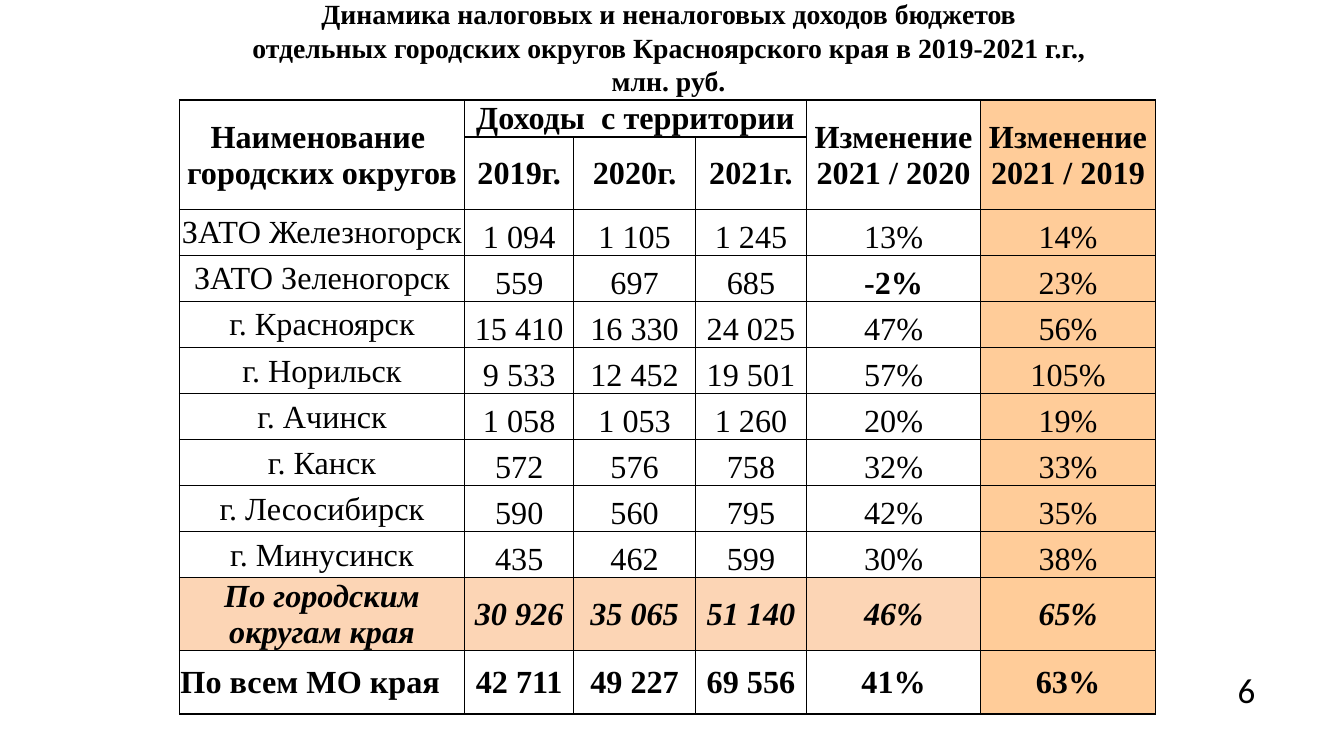
from dataclasses import dataclass
from typing import Any, Optional

from lxml.etree import SubElement
from pptx import Presentation
from pptx.dml.color import RGBColor
from pptx.enum.text import MSO_ANCHOR, MSO_AUTO_SIZE, PP_ALIGN
from pptx.oxml.ns import qn
from pptx.util import Pt


@dataclass(frozen=True)
class Theme:
    ink: str = "000000"
    peach: str = "FFCC99"
    rose: str = "FCD5B5"
    serif: str = "Times New Roman"
    sans: str = "Calibri"
    head: float = 19.8
    body: float = 23
    page: float = 25


@dataclass(frozen=True)
class Look:
    bold: bool = False
    slant: bool = False
    fill: Optional[str] = None
    anchor: Any = MSO_ANCHOR.MIDDLE
    align: Any = PP_ALIGN.CENTER


@dataclass(frozen=True)
class Row:
    name: str
    cells: tuple[str, ...]


@dataclass(frozen=True)
class Span:
    top: int
    left: int
    end: int
    right: int


THEME = Theme()
TITLE = ("Динамика налоговых и неналоговых доходов бюджетов \v"
         "отдельных городских округов Красноярского края в 2019-2021 г.г., \v"
         "млн. руб. ")
HEADS = (
    Row("Наименование \nгородских округов",
        ("Доходы  с территории", "", "", "Изменение 2021 / 2020", "Изменение 2021 / 2019")),
    Row("", ("2019г.", "2020г.", "2021г.", "", "")),
)
TOWNS = (
    Row("ЗАТО Железногорск", ("1 094", "1 105", "1 245", "13%", "14%")),
    Row("ЗАТО Зеленогорск", ("559", "697", "685", "-2%", "23%")),
    Row("г. Красноярск", ("15 410", "16 330", "24 025", "47%", "56%")),
    Row("г. Норильск", ("9 533", "12 452", "19 501", "57%", "105%")),
    Row("г. Ачинск", ("1 058", "1 053", "1 260", "20%", "19%")),
    Row("г. Канск", ("572", "576", "758", "32%", "33%")),
    Row("г. Лесосибирск", ("590", "560", "795", "42%", "35%")),
    Row("г. Минусинск", ("435", "462", "599", "30%", "38%")),
)
SUMS = (
    Row("По городским округам края", ("30 926", "35 065", "51 140", "46%", "65%")),
    Row("По всем МО края", ("42 711", "49 227", "69 556", "41%", "63%")),
)
ROWS = HEADS + TOWNS + SUMS
SPANS = (Span(0, 0, 1, 0), Span(0, 1, 0, 3), Span(0, 4, 1, 4), Span(0, 5, 1, 5))
WIDTHS = (203.8, 77.8, 87.1, 79.2, 124.6, 124.6)
HEIGHTS = (26, 39.6) + (32.9,) * len(TOWNS) + (45.4,) * len(SUMS)


def apply(item: Any, **values: Any) -> None:
    for key, value in values.items():
        setattr(item, key, value)


def style(font: Any, face: str, size: float, bold: bool = False, slant: bool = False) -> None:
    apply(font, name=face, size=Pt(size), bold=bold, italic=slant)
    font.color.rgb = RGBColor.from_string(THEME.ink)


def border(cell: Any) -> None:
    props = cell._tc.get_or_add_tcPr()
    for side in ("a:lnL", "a:lnR", "a:lnT", "a:lnB"):
        line = SubElement(props, qn(side), w=str(Pt(1)))
        paint = SubElement(line, qn("a:solidFill"))
        SubElement(paint, qn("a:srgbClr"), val=THEME.ink)


def choose(row: int, col: int, text: str) -> Look:
    """Pick the look of a cell from its place in the table."""
    total, last = len(ROWS) - 2, len(ROWS) - 1
    town = len(HEADS) <= row < total
    fill = THEME.peach if col == len(WIDTHS) - 1 else THEME.rose if row == total else None
    return Look(
        bold=not town or text.startswith("-"),
        slant=row == total,
        fill=fill,
        anchor=MSO_ANCHOR.BOTTOM if town and col else MSO_ANCHOR.MIDDLE,
        align=PP_ALIGN.LEFT if row == last and col == 0 else PP_ALIGN.CENTER,
    )


def draw_cell(cell: Any, text: str, look: Look) -> None:
    border(cell)
    if look.fill:
        cell.fill.solid()
        cell.fill.fore_color.rgb = RGBColor.from_string(look.fill)
    else:
        cell.fill.background()
    apply(cell, margin_left=Pt(0.72), margin_right=Pt(0.72), margin_top=Pt(0.72),
          margin_bottom=0, vertical_anchor=look.anchor)
    cell.text_frame.text = text
    for para in cell.text_frame.paragraphs:
        para.alignment = look.align
        style(para.font, THEME.serif, THEME.body, look.bold, look.slant)
        for run in para.runs:
            style(run.font, THEME.serif, THEME.body, look.bold, look.slant)


def draw_title(slide: Any) -> None:
    title = slide.shapes.title
    apply(title, left=Pt(120), top=0, width=Pt(720), height=Pt(43.2))
    frame = title.text_frame
    apply(frame, word_wrap=True, auto_size=MSO_AUTO_SIZE.NONE, margin_top=Pt(24),
          margin_bottom=0, vertical_anchor=MSO_ANCHOR.MIDDLE)
    frame.text = TITLE
    para = frame.paragraphs[0]
    para.alignment = PP_ALIGN.CENTER
    style(para.font, THEME.serif, THEME.head, True)
    for run in para.runs:
        style(run.font, THEME.serif, THEME.head, True)


def draw_table(slide: Any) -> None:
    table = slide.shapes.add_table(len(ROWS), len(WIDTHS), Pt(128.2), Pt(71.5),
                                   Pt(sum(WIDTHS)), Pt(sum(HEIGHTS))).table
    apply(table, first_row=False, horz_banding=False)
    for col, width in zip(table.columns, WIDTHS):
        col.width = Pt(width)
    for line, height in zip(table.rows, HEIGHTS):
        line.height = Pt(height)
    for r, row in enumerate(ROWS):
        for c, text in enumerate((row.name, *row.cells)):
            draw_cell(table.cell(r, c), text, choose(r, c, text))
    for span in SPANS:
        table.cell(span.top, span.left).merge(table.cell(span.end, span.right))


def draw_page(slide: Any) -> None:
    box = slide.shapes.add_textbox(Pt(877), Pt(473.8), Pt(45.4), Pt(37.4))
    apply(box.text_frame, word_wrap=True, auto_size=MSO_AUTO_SIZE.SHAPE_TO_FIT_TEXT)
    run = box.text_frame.paragraphs[0].add_run()
    run.text = "6"
    style(run.font, THEME.sans, THEME.page)


def main() -> None:
    deck = Presentation()
    apply(deck, slide_width=Pt(960), slide_height=Pt(540))
    slide = deck.slides.add_slide(deck.slide_layouts[5])
    draw_title(slide)
    draw_table(slide)
    draw_page(slide)
    deck.save("out.pptx")


if __name__ == "__main__":
    main()
